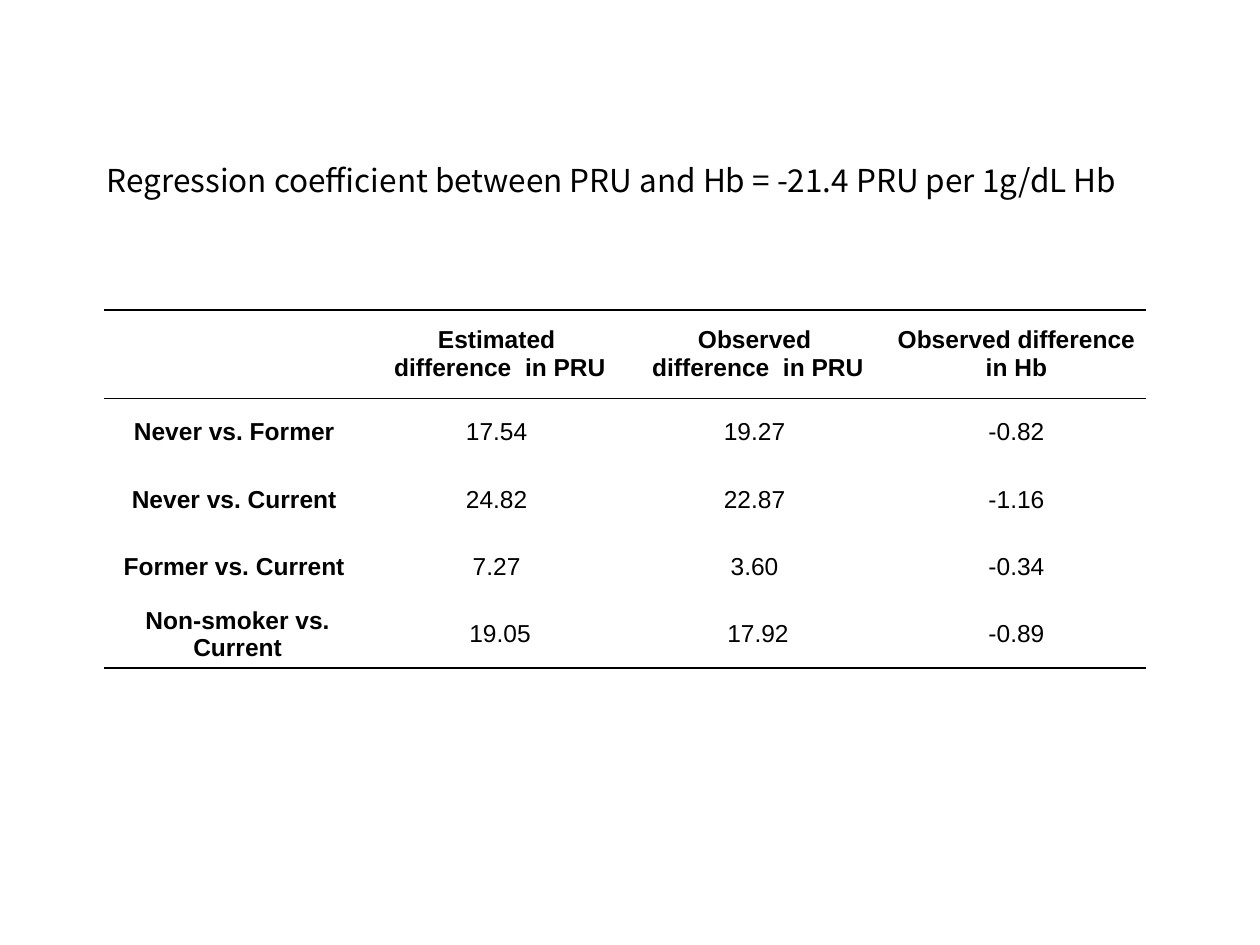
import pptx
import pptx.util
import pptx.dml.color
import pptx.enum.text
import pptx.oxml
import pptx.oxml.ns

Cm, Pt = pptx.util.Cm, pptx.util.Pt
ALIGN = pptx.enum.text.PP_ALIGN
MID = pptx.enum.text.MSO_ANCHOR.MIDDLE
INK = "000000"

TITLE = "Regression coefficient between PRU and Hb = -21.4 PRU per 1g/dL Hb"
ROWS = [
    ("", "Estimated \ndifference  in PRU", "Observed \ndifference  in PRU",
     "Observed difference in Hb"),
    ("Never vs. Former ", "17.54 ", "19.27 ", "-0.82"),
    ("Never vs. Current ", "24.82 ", "22.87 ", "-1.16"),
    ("Former vs. Current ", "7.27 ", "3.60 ", "-0.34"),
    ("Non-smoker vs. Current", "19.05", "17.92", "-0.89"),
]
WIDTHS = [5.38, 5.2, 5.2, 5.22]
HEIGHTS = [1.78] + [1.36] * 4
RULED = {"T": (0, 1), "B": (0, len(ROWS) - 1)}


def color(code):
    return pptx.dml.color.RGBColor.from_string(code)


def write(para, text, face, size, bold, align):
    para.alignment = align
    para.font.size = Pt(size)
    if text:
        run = para.add_run()
        run.text = text
        font = run.font
        font.name, font.size, font.bold = face, Pt(size), bold
        font.color.rgb = color(INK)


def border(cell, row):
    props = cell._tc.get_or_add_tcPr()
    for spot, side in enumerate("LRTB"):
        paint = "<a:noFill/>"
        if row in RULED.get(side, ()):
            paint = f'<a:solidFill><a:srgbClr val="{INK}"/></a:solidFill>'
        props.insert(spot, pptx.oxml.parse_xml(
            f'<a:ln{side} {pptx.oxml.ns.nsdecls("a")} w="{Pt(1)}">{paint}</a:ln{side}>'))


def fill(cell, text, row, col):
    cell.fill.background()
    cell.vertical_anchor = MID
    cell.margin_left = cell.margin_right = Cm(0.15)
    cell.margin_top = cell.margin_bottom = 0
    frame = cell.text_frame
    for n, line in enumerate(text.split("\n")):
        para = frame.add_paragraph() if n else frame.paragraphs[0]
        write(para, line, "Arial", 14, row == 0 or col == 0, ALIGN.CENTER)
    border(cell, row)


def main():
    deck = pptx.Presentation()
    deck.slide_width, deck.slide_height = Cm(25.4), Cm(19.05)
    slide = deck.slides.add_slide(deck.slide_layouts[5])

    title = slide.shapes.title
    title.left, title.top, title.width, title.height = Cm(1.9), Cm(3.12), Cm(21.42), Cm(1.02)
    frame = title.text_frame
    frame.word_wrap = True
    frame.auto_size = pptx.enum.text.MSO_AUTO_SIZE.NONE
    frame.vertical_anchor = pptx.enum.text.MSO_ANCHOR.TOP
    write(frame.paragraphs[0], TITLE, "Noto Sans CJK KR", 18, False, ALIGN.LEFT)

    table = slide.shapes.add_table(
        len(ROWS), len(WIDTHS), Cm(2.1), Cm(6.25), Cm(sum(WIDTHS)), Cm(sum(HEIGHTS))).table
    table.first_row = table.horz_banding = False
    for col, wide in zip(table.columns, WIDTHS):
        col.width = Cm(wide)
    for r, (line, high) in enumerate(zip(ROWS, HEIGHTS)):
        table.rows[r].height = Cm(high)
        for c, text in enumerate(line):
            fill(table.cell(r, c), text, r, c)

    deck.save("out.pptx")


if __name__ == "__main__":
    main()
